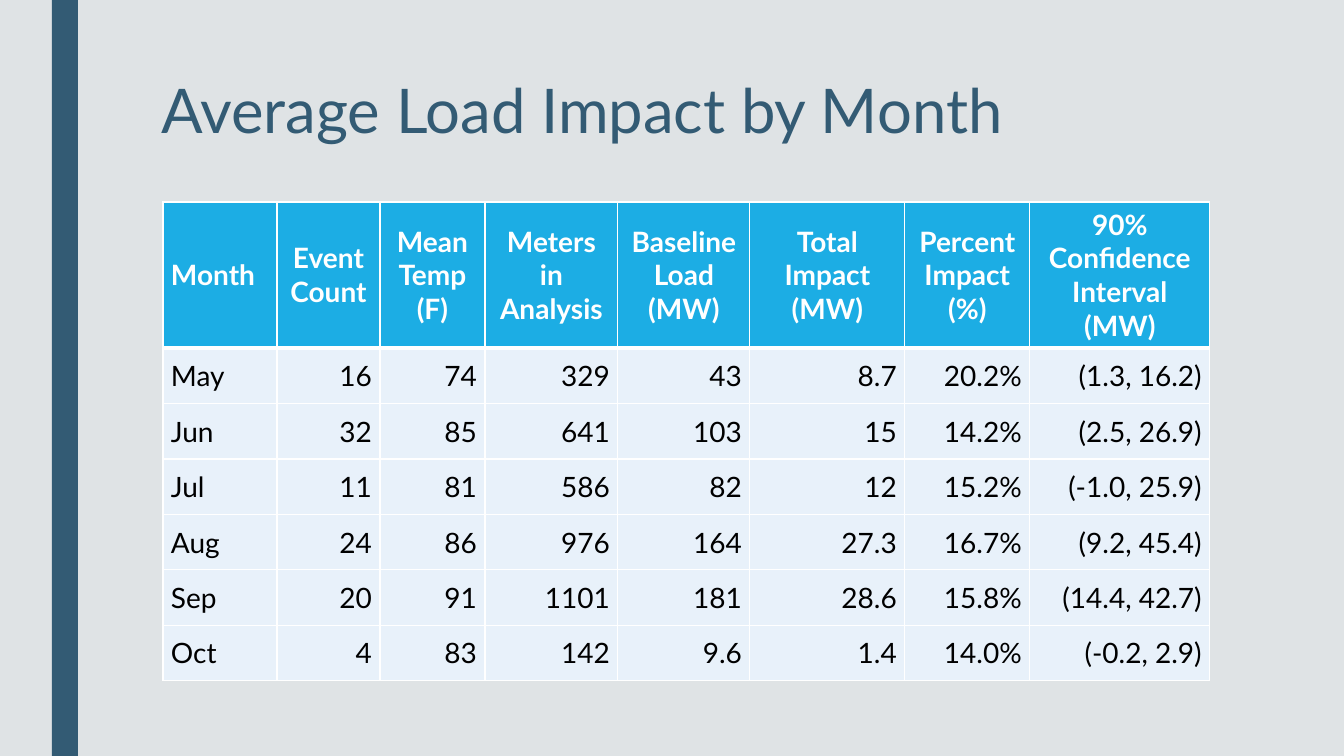
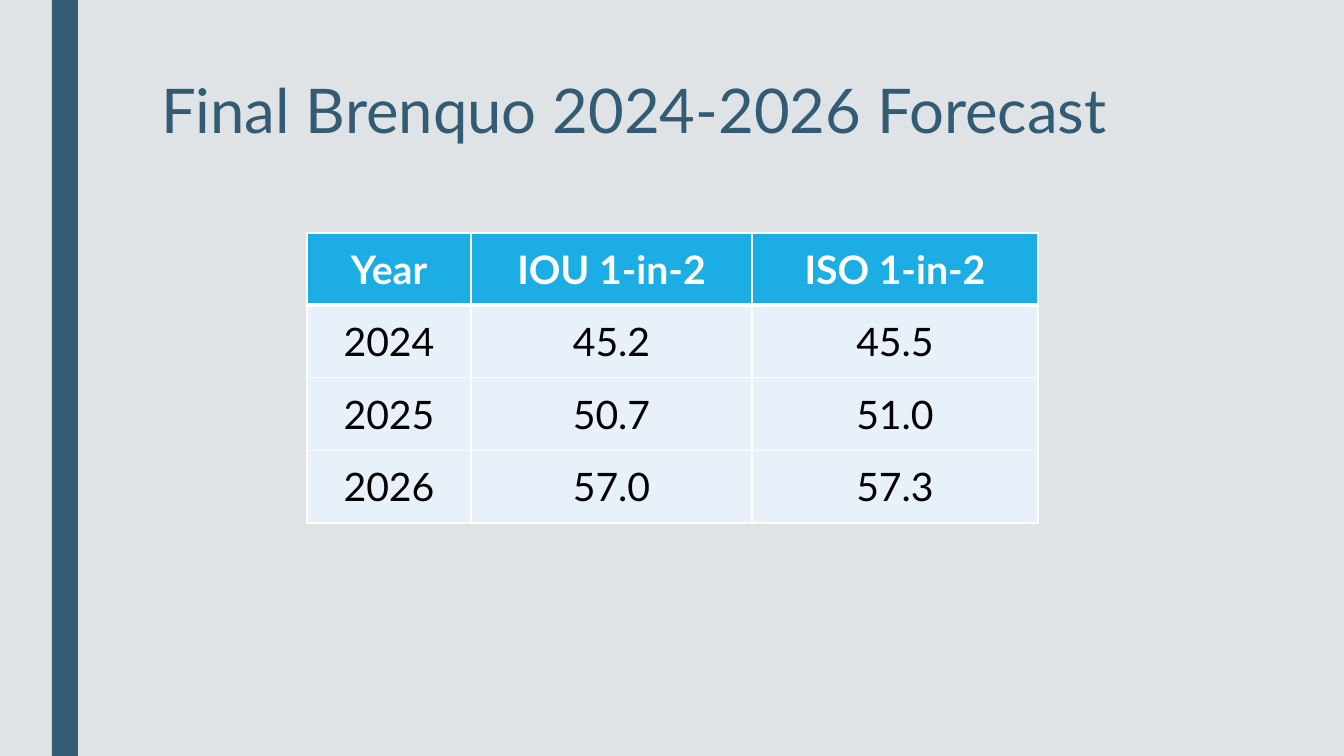
from lxml import etree
from pptx import Presentation
from pptx.dml.color import RGBColor
from pptx.enum.shapes import MSO_SHAPE
from pptx.enum.text import MSO_ANCHOR, MSO_AUTO_SIZE, PP_ALIGN
from pptx.oxml.ns import qn
from pptx.util import Pt

RECTANGLE = MSO_SHAPE.RECTANGLE
TOP, MIDDLE = MSO_ANCHOR.TOP, MSO_ANCHOR.MIDDLE
LEFT, CENTER, RIGHT = PP_ALIGN.LEFT, PP_ALIGN.CENTER, PP_ALIGN.RIGHT
NO_AUTOFIT = MSO_AUTO_SIZE.NONE

EMU_PER_PX = 914400 / 100.8
SLIDE_W, SLIDE_H = 1344, 756
BAND_BOX = (52, 0, 26, SLIDE_H)
TITLE_BOX = (151, 76, 1058, 163)
TITLE_ONLY_LAYOUT = 5

FONT = "Lato"
BACKGROUND = "DFE3E5"
NAVY = "335B74"
HEADER_BLUE = "1CADE4"
ROW_BLUE = "E8F1FA"
WHITE = "FFFFFF"
BLACK = "000000"

THIN, THICK = 1, 3
CELL_MARGIN = 8

IMPACT_ROWS = [
    ["Month", "Event Count", "Mean Temp (F)", "Meters in Analysis",
     "Baseline Load (MW)", "Total Impact (MW)", "Percent Impact (%)",
     "90% Confidence Interval (MW)"],
    ["May", "16", "74", "329", "43", "8.7", "20.2%", "(1.3, 16.2)"],
    ["Jun", "32", "85", "641", "103", "15", "14.2%", "(2.5, 26.9)"],
    ["Jul", "11", "81", "586", "82", "12", "15.2%", "(-1.0, 25.9)"],
    ["Aug", "24", "86", "976", "164", "27.3", "16.7%", "(9.2, 45.4)"],
    ["Sep", "20", "91", "1101", "181", "28.6", "15.8%", "(14.4, 42.7)"],
    ["Oct", "4", "83", "142", "9.6", "1.4", "14.0%", "(-0.2, 2.9)"],
]
FORECAST_ROWS = [
    ["Year", "IOU 1-in-2", "ISO 1-in-2"],
    ["2024", "45.2", "45.5"],
    ["2025", "50.7", "51.0"],
    ["2026", "57.0", "57.3"],
]


def px(length):
    return round(length * EMU_PER_PX)


def paint(fill, color):
    fill.solid()
    fill.fore_color.rgb = RGBColor.from_string(color)


def write(frame, text, size, color, bold=False, align=LEFT, spacing=None):
    paragraph = frame.paragraphs[0]
    paragraph.alignment = align
    paragraph.line_spacing = spacing
    run = paragraph.add_run()
    run.text = text
    run.font.name = FONT
    run.font.size = Pt(size)
    run.font.bold = bold
    run.font.color.rgb = RGBColor.from_string(color)


def place(shape, box):
    shape.left, shape.top, shape.width, shape.height = map(px, box)


def style_master(master, slide):
    """Draw the band on the slide, then move it behind the master's parts."""
    paint(master.background.fill, BACKGROUND)
    band = slide.shapes.add_shape(RECTANGLE, *map(px, BAND_BOX))
    band.shadow.inherit = False
    paint(band.fill, NAVY)
    band.line.fill.background()
    band.element.nvSpPr.cNvPr.set("id", "100")
    master.element.cSld.spTree.insert(2, band.element)


def add_titled_slide(prs, title):
    slide = prs.slides.add_slide(prs.slide_layouts[TITLE_ONLY_LAYOUT])
    heading = slide.shapes.title
    place(heading, TITLE_BOX)
    frame = heading.text_frame
    frame.word_wrap = True
    frame.auto_size = NO_AUTOFIT
    frame.vertical_anchor = TOP
    write(frame, title, 44, NAVY, spacing=0.89)
    return slide


def set_borders(cell, top, bottom):
    """White lines on all four sides; top and bottom are widths in points."""
    properties = cell._tc.get_or_add_tcPr()
    widths = {"a:lnL": THIN, "a:lnR": THIN, "a:lnT": top, "a:lnB": bottom}
    for position, (side, width) in enumerate(widths.items()):
        line = etree.Element(qn(side), w=str(Pt(width)))
        fill = etree.SubElement(line, qn("a:solidFill"))
        etree.SubElement(fill, qn("a:srgbClr"), val=WHITE)
        properties.insert(position, line)


def add_data_table(slide, box, rows, widths, header_height, size, aligns):
    """aligns holds the header and body alignment of each column."""
    height = box[3]
    table = slide.shapes.add_table(len(rows), len(widths), *map(px, box)).table
    table.horz_banding = False
    for column, width in zip(table.columns, widths):
        column.width = px(width)
    row_height = (height - header_height) / (len(rows) - 1)
    for r, values in enumerate(rows):
        is_header = r == 0
        table.rows[r].height = px(header_height if is_header else row_height)
        for c, value in enumerate(values):
            cell = table.cell(r, c)
            paint(cell.fill, HEADER_BLUE if is_header else ROW_BLUE)
            set_borders(cell, top=THICK if r == 1 else THIN,
                        bottom=THICK if is_header else THIN)
            cell.vertical_anchor = MIDDLE
            cell.margin_left = cell.margin_right = px(CELL_MARGIN)
            cell.margin_top = cell.margin_bottom = 0
            header_align, body_align = aligns[c]
            write(cell.text_frame, value, size,
                  WHITE if is_header else BLACK, bold=is_header,
                  align=header_align if is_header else body_align)


def main():
    prs = Presentation()
    prs.slide_width, prs.slide_height = px(SLIDE_W), px(SLIDE_H)

    impact = add_titled_slide(prs, "Average Load Impact by Month")
    style_master(prs.slide_master, impact)
    add_data_table(impact, (163, 202, 1047, 479), IMPACT_ROWS,
                   widths=[114, 103, 105, 133, 132, 155, 125, 180],
                   header_height=146, size=20,
                   aligns=[(LEFT, LEFT)] + [(CENTER, RIGHT)] * 7)

    forecast = add_titled_slide(prs, "Final Brenquo 2024-2026 Forecast")
    add_data_table(forecast, (307, 233, 731, 290), FORECAST_ROWS,
                   widths=[164, 281, 286], header_height=72, size=28,
                   aligns=[(CENTER, CENTER)] * 3)

    prs.save("out.pptx")


if __name__ == "__main__":
    main()
